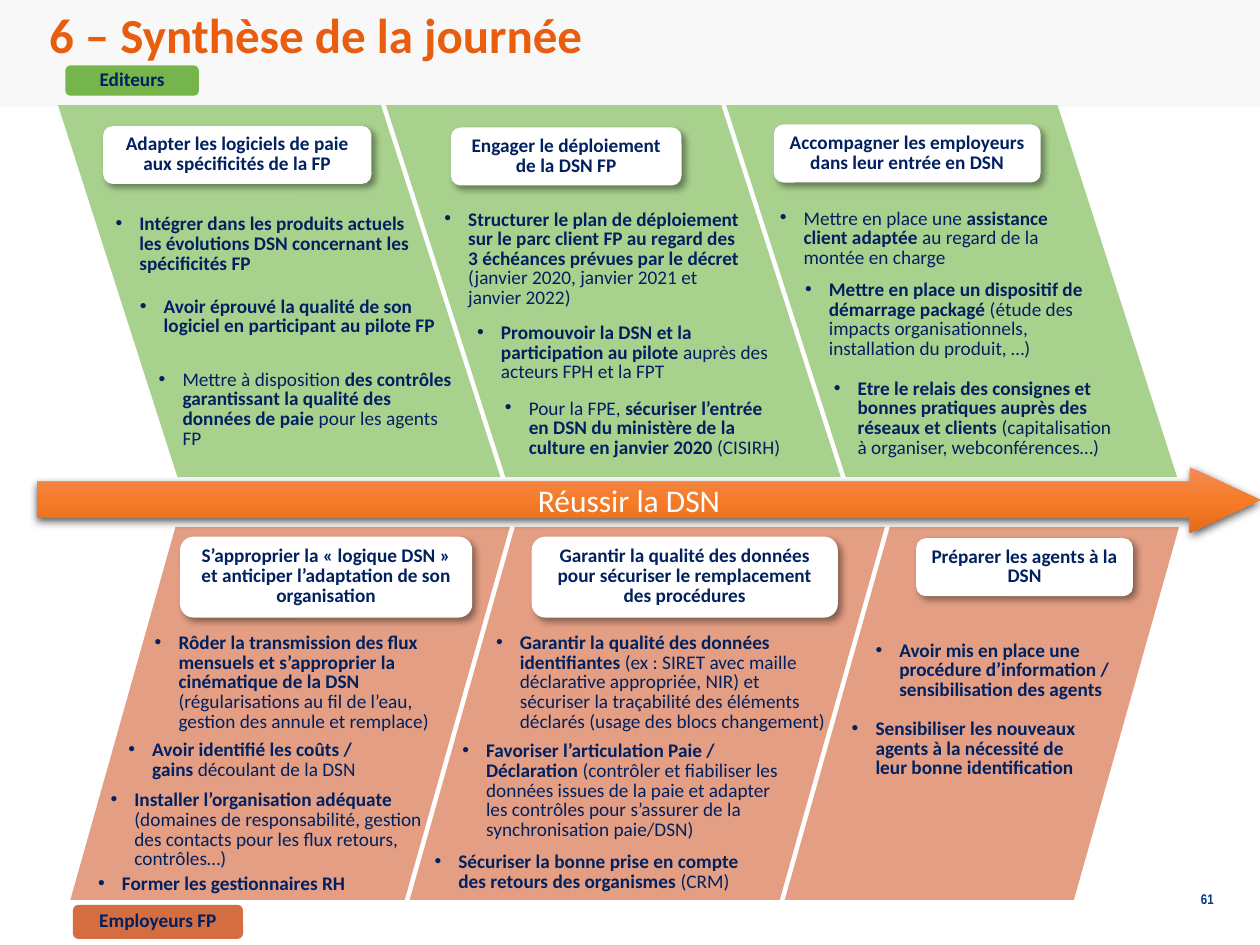
from pptx import Presentation
from pptx.dml.color import RGBColor
from pptx.enum.shapes import MSO_SHAPE
from pptx.enum.text import MSO_ANCHOR, MSO_AUTO_SIZE, PP_ALIGN
from pptx.oxml import parse_xml
from pptx.oxml.ns import nsdecls, qn
from pptx.util import Cm, Pt

RECTANGLE = MSO_SHAPE.RECTANGLE
ROUNDED = MSO_SHAPE.ROUNDED_RECTANGLE
PARALLELOGRAM = MSO_SHAPE.PARALLELOGRAM
RIGHT_ARROW = MSO_SHAPE.RIGHT_ARROW
TOP, MIDDLE = MSO_ANCHOR.TOP, MSO_ANCHOR.MIDDLE
LEFT, CENTER, RIGHT = PP_ALIGN.LEFT, PP_ALIGN.CENTER, PP_ALIGN.RIGHT
GROW, FIXED = MSO_AUTO_SIZE.SHAPE_TO_FIT_TEXT, MSO_AUTO_SIZE.NONE

WHITE = RGBColor(0xFF, 0xFF, 0xFF)
PALE_GREY = RGBColor(0xF8, 0xF8, 0xF8)
NAVY = RGBColor(0x00, 0x20, 0x60)
BLUE = RGBColor(0x00, 0x38, 0x82)
ORANGE = RGBColor(0xE9, 0x5D, 0x0F)
LIGHT_GREEN = RGBColor(0xA9, 0xD1, 0x8E)
GREEN = RGBColor(0x76, 0xB5, 0x4B)
SALMON = RGBColor(0xE3, 0x9E, 0x83)
BRICK = RGBColor(0xD5, 0x6D, 0x43)
ARROW_STOPS = [(0, RGBColor(0xF1, 0x8C, 0x57)), (50, RGBColor(0xF6, 0x7B, 0x28)),
               (100, RGBColor(0xE5, 0x6C, 0x19))]

PAD_X, PAD_Y = 0.25, 0.13
LINE_HEIGHT = 0.4
COLUMN_GAP = 0.1

# Row: left, top, height, slant, colour, flipped, column widths
ROWS = [
    (1.17, 2.12, 7.5, 2.41, LIGHT_GREEN, True, (8.92, 9.17, 9.09)),
    (1.42, 10.62, 7.52, 2.12, SALMON, False, (8.86, 9.58, 7.95)),
]

# Heading: left, top, width, height, text
HEADINGS = [
    (2.08, 2.54, 5.41, 1.17, "Adapter les logiciels de paie aux spécificités de la FP"),
    (9.09, 2.57, 4.65, 1.17, "Engager le déploiement de la DSN FP"),
    (15.6, 2.51, 5.38, 1.17, "Accompagner les employeurs dans leur entrée en DSN"),
    (3.63, 10.82, 5.89, 1.63,
     "S’approprier la « logique DSN » et anticiper l’adaptation de son organisation"),
    (10.72, 10.82, 6.17, 1.63,
     "Garantir la qualité des données pour sécuriser le remplacement des procédures"),
    (18.47, 10.85, 4.37, 1.17, "Préparer les agents à la DSN"),
]

# Bullet: left, top, width, lines, vertical padding, text with **bold** parts
BULLETS = [
    (2.08, 4.34, 6.63, 3, 0, "**Intégrer dans les produits actuels les évolutions DSN "
     "concernant les spécificités FP**"),
    (2.57, 5.87, 6.96, 2, PAD_Y, "**Avoir éprouvé la qualité de son logiciel en participant "
     "au pilote FP**"),
    (2.95, 7.34, 6.55, 4, PAD_Y, "Mettre à disposition **des contrôles garantissant la qualité "
     "des données de paie **pour les agents FP"),
    (8.71, 4.24, 6.63, 5, 0, "**Structurer le plan de déploiement sur le parc client FP au "
     "regard des 3 échéances prévues par le décret **"
     "(janvier 2020, janvier 2021 et janvier 2022)"),
    (9.37, 6.53, 6.48, 3, 0, "**Promouvoir la DSN et la participation au pilote **auprès des "
     "acteurs FPH et la FPT"),
    (9.93, 8.05, 6.1, 3, 0, "Pour la FPE, **sécuriser l’entrée en DSN du ministère de la "
     "culture en janvier 2020 **(CISIRH)"),
    (15.47, 4.09, 6.1, 3, PAD_Y, "Mettre en place une **assistance client adaptée **au regard "
     "de la montée en charge"),
    (15.98, 5.66, 6.63, 4, 0, "**Mettre en place un dispositif de démarrage packagé **(étude "
     "des impacts organisationnels, installation du produit, …)"),
    (16.56, 7.65, 6.15, 4, 0, "**Etre le relais des consignes et bonnes pratiques auprès des "
     "réseaux et clients **(capitalisation à organiser, webconférences…)"),
    (2.87, 12.65, 6.88, 5, PAD_Y, "**Rôder la transmission des flux mensuels et s’approprier la "
     "cinématique de la DSN **(régularisations au fil de l’eau, gestion des annule et remplace)"),
    (2.34, 14.81, 5.84, 2, PAD_Y, "**Avoir identifié les coûts / gains **découlant de la DSN"),
    (1.98, 15.82, 7.32, 4, PAD_Y, "**Installer l’organisation adéquate **(domaines de "
     "responsabilité, gestion des contacts pour les flux retours, contrôles…)"),
    (1.73, 17.5, 6.78, 1, PAD_Y, "**Former les gestionnaires RH**"),
    (9.75, 12.78, 7.14, 5, 0, "**Garantir la qualité des données identifiantes **(ex : SIRET "
     "avec maille déclarative appropriée, NIR) et sécuriser la traçabilité des éléments "
     "déclarés (usage des blocs changement)"),
    (9.07, 14.83, 7.14, 6, PAD_Y, "**Favoriser l’articulation Paie / Déclaration **(contrôler et "
     "fiabiliser les données issues de la paie et adapter les contrôles pour s’assurer de la "
     "synchronisation paie/DSN)"),
    (8.51, 17.2, 6.93, 2, 0, "**Sécuriser la bonne prise en compte des retours des "
     "organismes **(CRM)"),
    (17.4, 12.8, 5.38, 3, PAD_Y, "**Avoir mis en place une procédure d’information / "
     "sensibilisation des agents**"),
    (16.92, 14.38, 5.26, 3, PAD_Y, "**Sensibiliser les nouveaux agents à la nécessité de leur "
     "bonne identification**"),
]


class SlideBuilder:
    body = {"name": "Calibri", "size": Pt(11)}

    def __init__(self, deck):
        self.slide = deck.slides.add_slide(deck.slide_layouts[5])
        self.shapes = self.slide.shapes

    def set_text(self, box, text, color=NAVY, align=LEFT, anchor=TOP, fit=FIXED,
                 pad_y=PAD_Y, spacing=0.85, bullet=False, **font):
        """Fill a box with one paragraph; **marks** enclose its bold parts."""
        frame = box.text_frame
        settings = {"word_wrap": True, "auto_size": fit, "vertical_anchor": anchor,
                    "margin_left": Cm(PAD_X), "margin_right": Cm(PAD_X),
                    "margin_top": Cm(pad_y), "margin_bottom": Cm(pad_y)}
        for name, value in settings.items():
            setattr(frame, name, value)
        para = frame.paragraphs[0]
        if bullet:
            properties = para._p.get_or_add_pPr()
            properties.set("marL", str(Cm(0.48)))
            properties.set("indent", str(Cm(-0.48)))
            properties.append(parse_xml(f'<a:buFont {nsdecls("a")} typeface="Arial"/>'))
            properties.append(parse_xml(f'<a:buChar {nsdecls("a")} char="•"/>'))
        para.alignment, para.line_spacing = align, spacing
        for index, part in enumerate(text.split("**")):
            if part:
                span = para.add_run()
                span.text = part
                for name, value in {**self.body, "bold": index % 2 == 1, **font}.items():
                    setattr(span.font, name, value)
                span.font.color.rgb = color

    def title(self, text):
        box = self.shapes.title
        place = {"left": 0.74, "top": -0.03, "width": 21.03, "height": 1.8}
        for name, value in place.items():
            setattr(box, name, Cm(value))
        self.set_text(box, text, ORANGE, spacing=1.0, size=Pt(28), bold=True)

    def shape(self, kind, left, top, width, height, fill):
        shape = self.shapes.add_shape(kind, Cm(left), Cm(top), Cm(width), Cm(height))
        shape.shadow.inherit = False
        shape.fill.solid()
        shape.fill.fore_color.rgb = fill
        shape.line.fill.background()
        return shape

    def band(self, height):
        band = self.shape(RECTANGLE, 0, 0, 25.4, height, PALE_GREY)
        self.shapes._spTree.insert(2, band._element)

    def shadow(self, shape, blur, distance, angle, opacity):
        effects = shape._element.spPr.find(qn("a:effectLst"))
        effects.append(parse_xml(
            f'<a:outerShdw {nsdecls("a")} blurRad="{Pt(blur)}" dist="{Pt(distance)}" '
            f'dir="{angle * 60000}" algn="ctr" rotWithShape="0"><a:srgbClr val="000000">'
            f'<a:alpha val="{opacity * 1000}"/></a:srgbClr></a:outerShdw>'))

    def panel_row(self, left, top, height, slant, fill, flipped, widths):
        for width in widths:
            panel = self.shape(PARALLELOGRAM, left, top, width, height, fill)
            panel.adjustments[0] = slant / height
            if flipped:
                panel._element.spPr.get_or_add_xfrm().set("flipV", "1")
            left += width - slant + COLUMN_GAP

    def heading(self, left, top, width, height, text):
        card = self.shape(ROUNDED, left, top, width, height, WHITE)
        self.shadow(card, 4, 3, 45, 40)
        self.set_text(card, text, align=CENTER, fit=GROW, bold=True)

    def label(self, left, top, width, height, fill, text):
        tag = self.shape(ROUNDED, left, top, width, height, fill)
        self.set_text(tag, text, align=CENTER, anchor=MIDDLE, bold=True)

    def text_box(self, left, top, width, height, text, **style):
        box = self.shapes.add_textbox(Cm(left), Cm(top), Cm(width), Cm(height))
        self.set_text(box, text, **style)

    def bullet(self, left, top, width, lines, pad_y, text):
        self.text_box(left, top, width, lines * LINE_HEIGHT + 2 * pad_y, text,
                      fit=GROW, pad_y=pad_y, bullet=True)

    def arrow(self, left, top, width, height, text):
        arrow = self.shape(RIGHT_ARROW, left, top, width, height, ORANGE)
        arrow.adjustments[0], arrow.adjustments[1] = 0.55, 1.07
        stops = "".join(f'<a:gs pos="{place * 1000}"><a:srgbClr val="{color}"/></a:gs>'
                        for place, color in ARROW_STOPS)
        properties = arrow._element.spPr
        properties.replace(properties.find(qn("a:solidFill")), parse_xml(
            f'<a:gradFill {nsdecls("a")} rotWithShape="1"><a:gsLst>{stops}</a:gsLst>'
            '<a:lin ang="5400000" scaled="0"/></a:gradFill>'))
        self.shadow(arrow, 4.5, 1.5, 90, 63)
        self.set_text(arrow, text, WHITE, CENTER, MIDDLE, spacing=1.0, size=Pt(18))


def main():
    deck = Presentation()
    deck.slide_width, deck.slide_height = Cm(25.4), Cm(19.05)
    builder = SlideBuilder(deck)
    builder.band(2.16)
    builder.title("6 – Synthèse de la journée")
    for row in ROWS:
        builder.panel_row(*row)
    for heading in HEADINGS:
        builder.heading(*heading)
    for bullet in BULLETS:
        builder.bullet(*bullet)
    builder.label(1.32, 1.32, 2.69, 0.61, GREEN, "Editeurs")
    builder.label(1.47, 18.24, 3.43, 0.69, BRICK, "Employeurs FP")
    builder.arrow(0.74, 9.42, 24.66, 1.32, "Réussir la DSN")
    builder.text_box(18.8, 17.83, 5.92, 1.02, "61", color=BLUE, align=RIGHT,
                     spacing=1.0, name="Arial Narrow", size=Pt(8), bold=True)
    deck.save("out.pptx")


if __name__ == "__main__":
    main()
